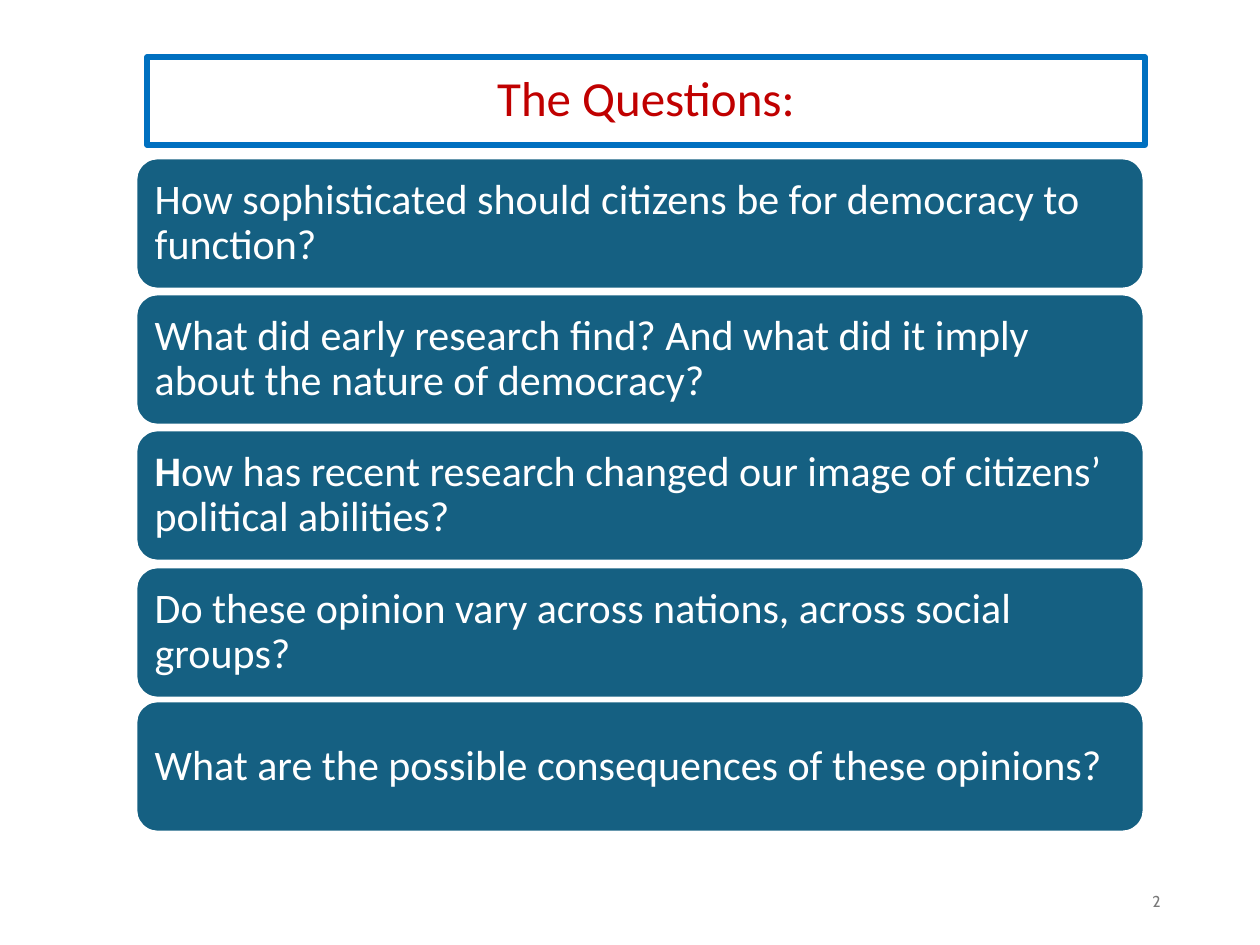
from pptx import Presentation
from pptx.dml.color import RGBColor
from pptx.enum.shapes import MSO_SHAPE
from pptx.enum.text import MSO_ANCHOR, PP_ALIGN
from pptx.util import Pt

PX = 914400 / 126
WHITE = RGBColor(0xFF, 0xFF, 0xFF)
TEAL = RGBColor(0x15, 0x60, 0x82)
BLUE = RGBColor(0x00, 0x70, 0xC0)
RED = RGBColor(0xC0, 0x00, 0x00)
GREY = RGBColor(0x79, 0x79, 0x79)

TITLE_FONT = {"name": "Calibri", "size": Pt(28)}
QUESTION_FONT = {"name": "Calibri", "size": Pt(24)}
NUMBER_FONT = {"name": "Cabin", "size": Pt(9)}

# Top of each box, then its text as (words, bold) runs
QUESTIONS = [
    (158, [("How sophisticated should citizens be for democracy to function?", False)]),
    (294, [("What did early research find? And what did it imply about the nature of democracy?", False)]),
    (430, [("H", True),
           ("ow has recent research changed our image of citizens’ political abilities?", False)]),
    (567, [("Do these opinion vary across nations, across social groups?", False)]),
    (701, [("What are the possible consequences of these opinions?", False)]),
]


def px(length):
    return round(length * PX)


class QuestionSlide:
    def __init__(self, prs):
        self.slide = prs.slides.add_slide(prs.slide_layouts[5])

    def set_text(self, shape, runs, font, color, align, spacing=0.9):
        """Fill a shape with one paragraph of (words, bold) runs."""
        frame = shape.text_frame
        frame.word_wrap = True
        frame.vertical_anchor = MSO_ANCHOR.MIDDLE
        paragraph = frame.paragraphs[0]
        paragraph.alignment = align
        paragraph.line_spacing = spacing
        for words, bold in runs:
            run = paragraph.add_run()
            run.text = words
            for key, value in {**font, "bold": bold}.items():
                setattr(run.font, key, value)
            run.font.color.rgb = color

    def title(self, words, left, top, width, height):
        heading = self.slide.shapes.title
        place = {"left": left, "top": top, "width": width, "height": height}
        for key, value in place.items():
            setattr(heading, key, px(value))
        heading.line.color.rgb = BLUE
        heading.line.width = Pt(3)
        self.set_text(heading, [(words, False)], TITLE_FONT, RED, PP_ALIGN.CENTER)

    def question(self, runs, left, top, width, height):
        box = self.slide.shapes.add_shape(
            MSO_SHAPE.ROUNDED_RECTANGLE, px(left), px(top), px(width), px(height))
        box.shadow.inherit = False
        box.fill.solid()
        box.fill.fore_color.rgb = TEAL
        box.line.color.rgb = WHITE
        box.line.width = Pt(1.5)
        for side in ("left", "top", "right", "bottom"):
            setattr(box.text_frame, f"margin_{side}", Pt(7.2))
        self.set_text(box, runs, QUESTION_FONT, WHITE, PP_ALIGN.LEFT)

    def page_number(self, number, left, top, width, height):
        label = self.slide.shapes.add_textbox(px(left), px(top), px(width), px(height))
        self.set_text(label, [(number, False)], NUMBER_FONT, GREY, PP_ALIGN.RIGHT, 1.0)


def main():
    prs = Presentation()
    prs.slide_width, prs.slide_height = px(1260), px(945)
    page = QuestionSlide(prs)
    page.title("The Questions:", 147, 57, 998, 88)
    for top, runs in QUESTIONS:
        page.question(runs, 136, top, 1008, 131)
    page.page_number("2", 890, 876, 283, 50)
    prs.save("out.pptx")


if __name__ == "__main__":
    main()
